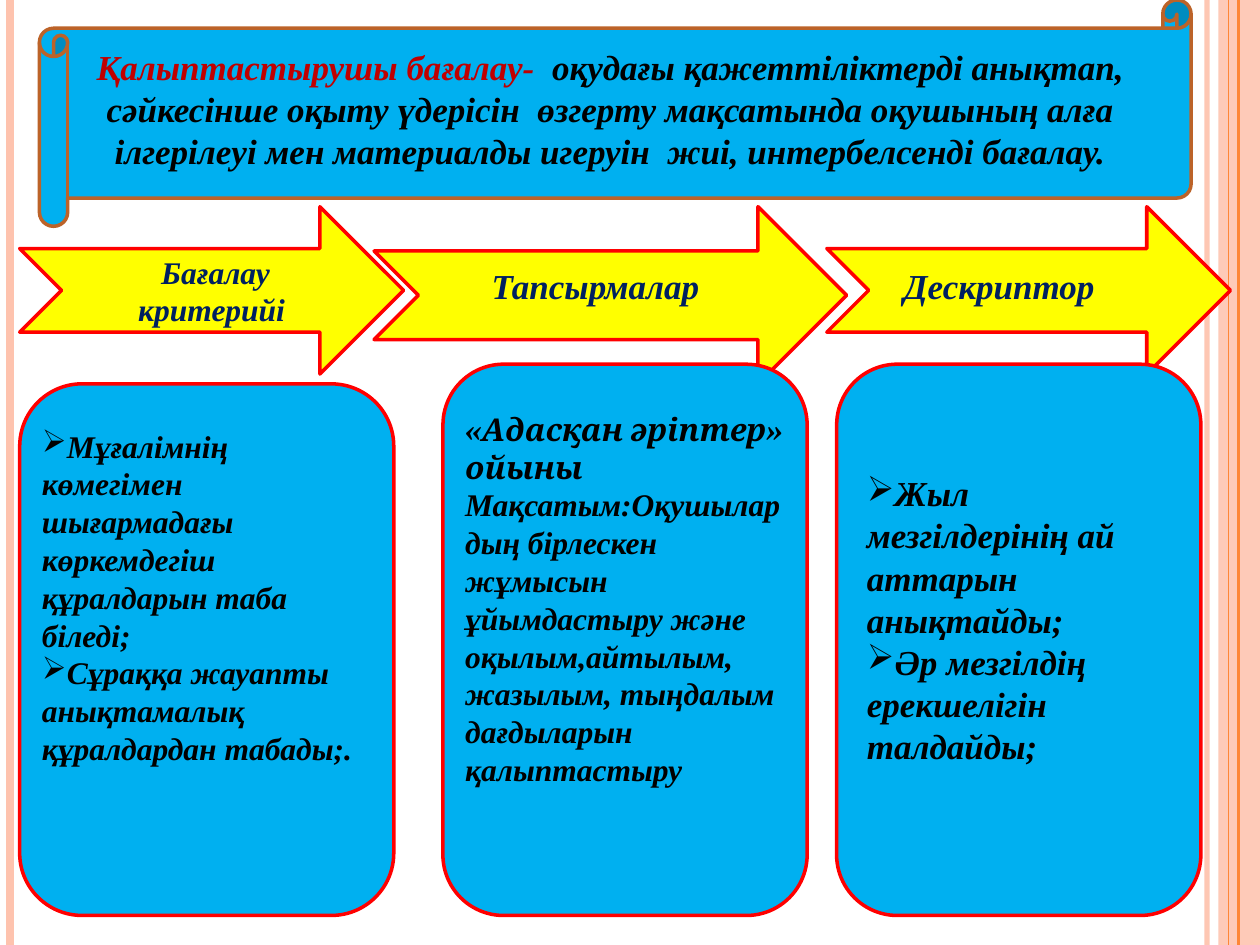
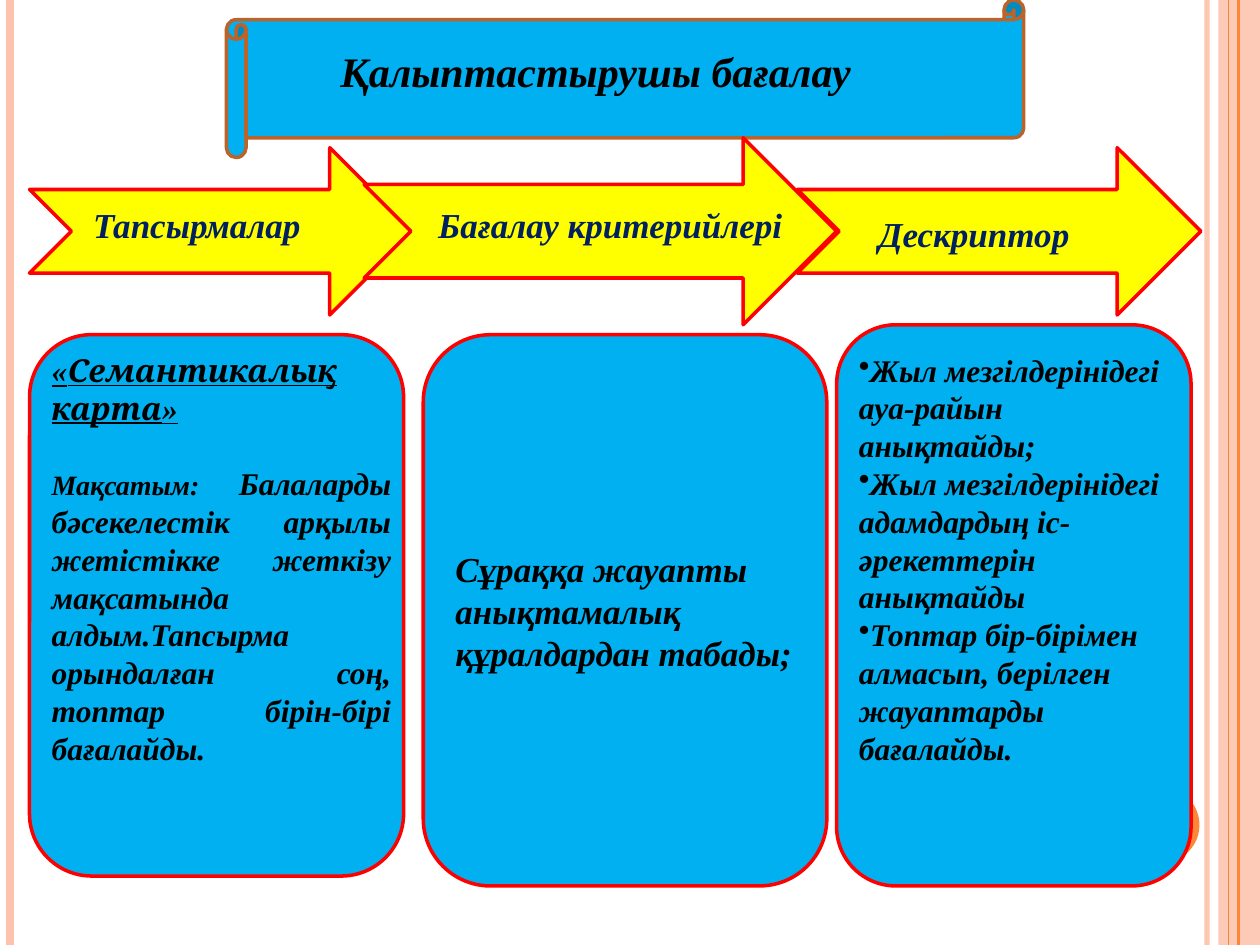
from dataclasses import dataclass
from typing import Optional

from lxml import etree
from pptx import Presentation
from pptx.dml.color import RGBColor
from pptx.enum.shapes import MSO_CONNECTOR, MSO_SHAPE
from pptx.enum.text import MSO_ANCHOR, MSO_AUTO_SIZE, PP_ALIGN
from pptx.oxml.ns import qn
from pptx.util import Inches, Pt

RECTANGLE, OVAL = MSO_SHAPE.RECTANGLE, MSO_SHAPE.OVAL
SCROLL, ARROW = MSO_SHAPE.HORIZONTAL_SCROLL, MSO_SHAPE.NOTCHED_RIGHT_ARROW
ROUNDED = MSO_SHAPE.ROUNDED_RECTANGLE
STRAIGHT = MSO_CONNECTOR.STRAIGHT
LEFT, CENTER, JUSTIFY = PP_ALIGN.LEFT, PP_ALIGN.CENTER, PP_ALIGN.JUSTIFY
TOP, MIDDLE = MSO_ANCHOR.TOP, MSO_ANCHOR.MIDDLE

SKY = RGBColor(0x00, 0xB0, 0xF0)
YELLOW = RGBColor(0xFF, 0xFF, 0x00)
RED = RGBColor(0xFF, 0x00, 0x00)
BROWN = RGBColor(0xBC, 0x63, 0x29)
NAVY = RGBColor(0x00, 0x20, 0x60)
CRIMSON = RGBColor(0xC0, 0x00, 0x00)
BLACK = RGBColor(0x00, 0x00, 0x00)
ORANGE = RGBColor(0xFE, 0x86, 0x37)
PEACH = RGBColor(0xFE, 0xC3, 0xAE)

SERIF, CAMBRIA = "Times New Roman", "Cambria"
WIDTH, HEIGHT = Inches(10), Inches(7.5)
COLUMNS, ROWS = 128, 96
BODY_SIZE, LABEL_SIZE = 18, 20
LABEL_ROWS = 5.6


@dataclass(frozen=True)
class Box:
    """Place on the grid, in columns and rows."""
    col: float
    row: float
    cols: float
    rows: float

    def emu(self) -> tuple[int, int, int, int]:
        cell_w, cell_h = WIDTH / COLUMNS, HEIGHT / ROWS
        return (round(self.col * cell_w), round(self.row * cell_h),
                round(self.cols * cell_w), round(self.rows * cell_h))


@dataclass(frozen=True)
class Span:
    text: str
    size: float = BODY_SIZE
    color: RGBColor = BLACK
    font: str = SERIF
    underline: bool = False


@dataclass(frozen=True)
class Para:
    spans: tuple[Span, ...]
    align: PP_ALIGN = LEFT
    bullet: str = ""
    space_after: float = 0


@dataclass(frozen=True)
class Panel:
    """Arrow or card; its words sit in text_box, or inside the shape itself."""
    box: Box
    paras: tuple[Para, ...]
    text_box: Optional[Box] = None
    bottom_inset: float = 0.05


@dataclass(frozen=True)
class Scheme:
    scroll: Box
    title_box: Box
    title: Para
    arrows: tuple[Panel, ...]
    cards: tuple[Panel, ...]


@dataclass(frozen=True)
class Rule:
    """Vertical line of the backdrop; x is a share of the width."""
    x: float
    color: RGBColor
    weight: float
    opacity: int = 100


RULES = (Rule(0.958, PEACH, 3, 93), Rule(0.008, PEACH, 4.5),
         Rule(0.983, ORANGE, 1.5), Rule(0.975, ORANGE, 0.75))


def label(text: str, size: float = LABEL_SIZE, align: PP_ALIGN = CENTER) -> Para:
    return Para((Span(text, size, NAVY),), align)


def points(mark: str, size: float, *texts: str) -> tuple[Para, ...]:
    return tuple(Para((Span(text, size),), bullet=mark) for text in texts)


def write(frame, paras: tuple[Para, ...], anchor=TOP) -> None:
    frame.word_wrap = True
    frame.auto_size = MSO_AUTO_SIZE.NONE
    frame.vertical_anchor = anchor
    for index, para in enumerate(paras):
        line = frame.add_paragraph() if index else frame.paragraphs[0]
        line.alignment = para.align
        if para.space_after:
            line.space_after = Pt(para.space_after)
        if para.bullet:
            props = line._p.get_or_add_pPr()
            props.set("marL", "0")
            props.set("indent", "0")
            etree.SubElement(props, qn("a:buChar")).set("char", para.bullet)
        for span in para.spans:
            run = line.add_run()
            run.text = span.text
            font = run.font
            font.name, font.size = span.font, Pt(span.size)
            font.bold = font.italic = True
            font.underline = span.underline
            font.color.rgb = span.color


def set_opacity(element, percent: int) -> None:
    for color in element.iter(qn("a:srgbClr")):
        etree.SubElement(color, qn("a:alpha")).set("val", str(percent * 1000))


def draw_shape(slide, kind, place, fill: RGBColor, line: Optional[RGBColor] = None):
    shape = slide.shapes.add_shape(kind, *place)
    shape.shadow.inherit = False
    shape.fill.solid()
    shape.fill.fore_color.rgb = fill
    if line is None:
        shape.line.fill.background()
    else:
        shape.line.color.rgb = line
        shape.line.width = Pt(2)
    return shape


def draw_rule(slide, rule: Rule) -> None:
    x = round(rule.x * WIDTH)
    line = slide.shapes.add_connector(STRAIGHT, x, 0, x, HEIGHT)
    line.line.color.rgb = rule.color
    line.line.width = Pt(rule.weight)
    etree.SubElement(line.element.spPr, qn("a:effectLst"))
    if rule.opacity < 100:
        set_opacity(line.element, rule.opacity)


def draw_backdrop(slide) -> None:
    side_left = round(0.967 * WIDTH)
    band = draw_shape(slide, RECTANGLE, (side_left, 0, WIDTH - side_left, HEIGHT), PEACH)
    set_opacity(band.element, 87)
    for rule in RULES:
        draw_rule(slide, rule)
    diameter = round(0.06 * WIDTH)
    draw_shape(slide, OVAL, (round(0.892 * WIDTH), round(0.833 * HEIGHT),
                             diameter, diameter), ORANGE)


def draw_panels(slide, kind, panels: tuple[Panel, ...], fill: RGBColor) -> None:
    shapes = [draw_shape(slide, kind, panel.box.emu(), fill, RED) for panel in panels]
    for shape, panel in zip(shapes, panels):
        if panel.text_box:
            holder = slide.shapes.add_textbox(*panel.text_box.emu())
            write(holder.text_frame, panel.paras)
        else:
            shape.text_frame.margin_bottom = Inches(panel.bottom_inset)
            write(shape.text_frame, panel.paras, MIDDLE)


def build(deck, scheme: Scheme) -> None:
    slide = deck.slides.add_slide(deck.slide_layouts[5])
    draw_backdrop(slide)
    scroll = draw_shape(slide, SCROLL, scheme.scroll.emu(), SKY, BROWN)
    # The heading lies on top of the scroll
    title = slide.shapes.title
    title.left, title.top, title.width, title.height = scheme.title_box.emu()
    write(title.text_frame, (scheme.title,))
    scroll.element.addnext(title.element)
    draw_panels(slide, ARROW, scheme.arrows, YELLOW)
    draw_panels(slide, ROUNDED, scheme.cards, SKY)


# Definition of formative assessment
DEFINITION = Scheme(
    scroll=Box(4, 0, 117, 23),
    title_box=Box(8, 4, 108, 14.5),
    title=Para((
        Span("Қалыптастырушы бағалау-  ", 20, CRIMSON),
        Span("оқудағы қажеттіліктерді анықтап, сәйкесінше оқыту үдерісін  өзгерту "
             "мақсатында оқушының алға ілгерілеуі мен материалды игеруін  жиі, "
             "интербелсенді бағалау.", 20)), CENTER),
    arrows=(
        Panel(Box(2, 21, 39, 17), (label(" Бағалау", 18), label("критерийі", 18))),
        Panel(Box(38, 21, 48, 18), (label("Тапсырмалар"),),
              Box(44, 26.2, 33, LABEL_ROWS)),
        Panel(Box(84, 21, 41, 17), (label("Дескриптор"),),
              Box(89, 26.2, 25, LABEL_ROWS)),
    ),
    cards=(
        Panel(Box(2, 39, 38, 54), points(
            "➢", 18,
            "Мұғалімнің көмегімен шығармадағы көркемдегіш құралдарын таба біледі;",
            "Сұраққа жауапты анықтамалық құралдардан табады;."),
            Box(3, 42.7, 36, 44)),
        Panel(Box(45, 37, 37, 56), (
            Para((Span("«Адасқан әріптер» ойыны", font=CAMBRIA),)),
            Para((Span("Мақсатым:Оқушылардың бірлескен жұмысын ұйымдастыру және "
                       "оқылым,айтылым, жазылым, тыңдалым дағдыларын қалыптастыру"),))),
            Box(46, 41, 35, 44)),
        Panel(Box(85, 37, 37, 56), points(
            "➢", 20,
            "Жыл мезгілдерінің ай аттарын анықтайды;",
            "Әр мезгілдің ерекшелігін талдайды;"), bottom_inset=0.38),
    ),
)

# Formative assessment of the semantic map task
SEMANTIC_MAP = Scheme(
    scroll=Box(23, 0, 81, 16),
    title_box=Box(30, 4, 61, 6.4),
    title=Para((Span("Қалыптастырушы бағалау", 24),), CENTER),
    arrows=(
        Panel(Box(3, 15, 39, 17), (label("Тапсырмалар"),), Box(6, 20, 28, LABEL_ROWS)),
        Panel(Box(37, 14, 48, 19), (label("Бағалау критерийлері"),),
              Box(42, 20, 40, LABEL_ROWS)),
        Panel(Box(81, 15, 41, 17), (label("Дескриптор", align=LEFT),),
              Box(88, 21, 27, LABEL_ROWS)),
    ),
    cards=(
        Panel(Box(3, 34, 38, 55), (
            Para((Span("«", underline=True),
                  Span("Семантикалық карта", font=CAMBRIA, underline=True),
                  Span("»", underline=True)), JUSTIFY, space_after=21.6),
            Para((Span("Мақсатым: ", 16),
                  Span("Балаларды бәсекелестік арқылы жетістікке жеткізу мақсатында "
                       "алдым.Тапсырма орындалған соң, топтар бірін-бірі бағалайды.")),
                 JUSTIFY)),
            Box(4, 35, 37, 44)),
        Panel(Box(43, 34, 41, 56), (
            Para((Span("Сұраққа жауапты анықтамалық құралдардан табады;", 20),)),)),
        Panel(Box(85, 33, 36, 57), points(
            "•", 18,
            "Жыл мезгілдерінідегі ауа-райын анықтайды;",
            "Жыл мезгілдерінідегі адамдардың іс-әрекеттерін анықтайды",
            "Топтар бір-бірімен алмасып, берілген жауаптарды бағалайды."),
            Box(86, 35, 34, 54)),
    ),
)


def main() -> None:
    deck = Presentation()
    deck.slide_width, deck.slide_height = WIDTH, HEIGHT
    for scheme in (DEFINITION, SEMANTIC_MAP):
        build(deck, scheme)
    deck.save("out.pptx")


if __name__ == "__main__":
    main()
